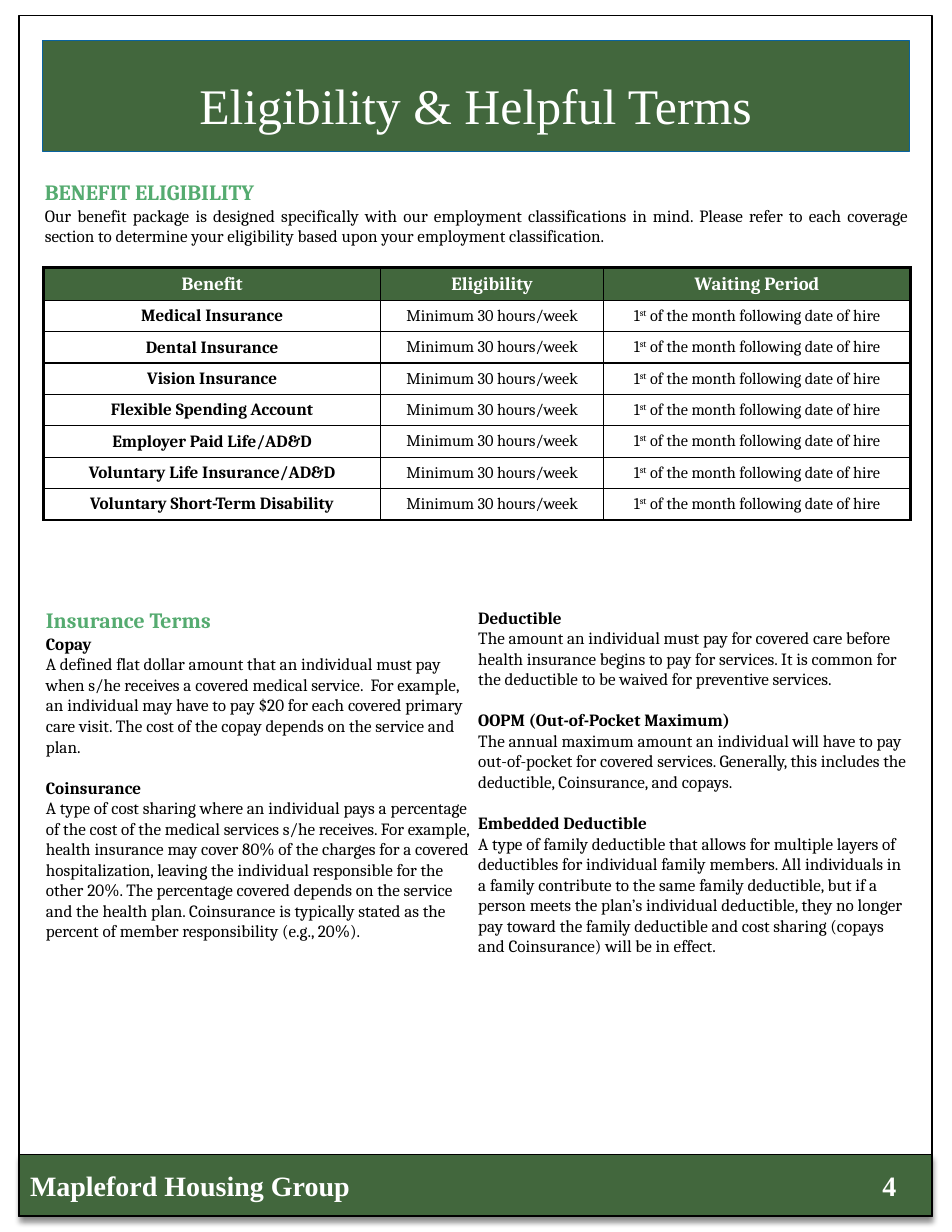
from dataclasses import dataclass
from lxml.etree import SubElement
from pptx import Presentation
from pptx.dml.color import RGBColor
from pptx.enum.shapes import MSO_SHAPE
from pptx.enum.text import MSO_ANCHOR, MSO_AUTO_SIZE, PP_ALIGN
from pptx.oxml.ns import qn
from pptx.util import Inches, Pt


@dataclass(frozen=True)
class Theme:
    serif: str = "Times New Roman"
    body: str = "Cambria"
    green: str = "42673D"
    accent: str = "55AB70"
    blue: str = "09639E"
    black: str = "000000"
    white: str = "FFFFFF"
    title_size: float = 32
    footer_size: float = 18
    heading_size: float = 14
    header_size: float = 12
    text_size: float = 11
    cell_size: float = 10.5
    gap: float = 13.2
    thin: float = 1
    thick: float = 2.25


def assign(target, values):
    for name, value in values.items():
        setattr(target, name, value)


class PageBuilder:
    def __init__(self, page, theme):
        self.page = page
        self.theme = theme
        self.styles = {
            "title": (theme.serif, theme.title_size, False, theme.white),
            "footer": (theme.serif, theme.footer_size, True, theme.white),
            "heading": (theme.body, theme.heading_size, True, theme.accent),
            "header": (theme.body, theme.header_size, True, theme.white),
            "term": (theme.body, theme.text_size, True, theme.black),
            "text": (theme.body, theme.text_size, False, theme.black),
            "cell": (theme.body, theme.cell_size, False, theme.black),
        }

    def span(self, para, text, style):
        span = para.add_run()
        span.text = text
        name, size, bold, color = self.styles[style]
        assign(span.font, {"name": name, "size": Pt(size), "bold": bold})
        span.font.color.rgb = RGBColor.from_string(color)
        return span

    def fill_text(self, frame, lines, align=PP_ALIGN.LEFT):
        for index, (style, text) in enumerate(lines):
            para = frame.paragraphs[0] if index == 0 else frame.add_paragraph()
            spaced = style == "term" and index > 0 and lines[index - 1][0] == "text"
            properties = para._p.get_or_add_pPr()
            properties.set("marL", "0")
            properties.set("indent", "0")
            SubElement(properties, qn("a:buNone"))
            assign(para, {
                "alignment": align,
                "space_before": Pt(self.theme.gap if spaced else 0),
            })
            self.span(para, text, style)

    def rectangle(self, place, line, width, fill=None):
        box = self.page.shapes.add_shape(MSO_SHAPE.RECTANGLE, *map(Inches, place))
        box.shadow.inherit = False
        box.line.color.rgb = RGBColor.from_string(line)
        box.line.width = Pt(width)
        if fill:
            box.fill.solid()
            box.fill.fore_color.rgb = RGBColor.from_string(fill)
        else:
            box.fill.background()
        return box

    def drop_shadow(self, box):
        effects = box._element.spPr.find(qn("a:effectLst"))
        shadow = SubElement(effects, qn("a:outerShdw"), blurRad=str(Pt(4)),
                            dist=str(Pt(2.5)), dir="5400000", rotWithShape="0")
        color = SubElement(shadow, qn("a:srgbClr"), val=self.theme.black)
        SubElement(color, qn("a:alpha"), val="47000")

    def text_box(self, place, lines, align=PP_ALIGN.LEFT, inset=True):
        box = self.page.shapes.add_textbox(*map(Inches, place))
        self.format_frame(box.text_frame, inset)
        self.fill_text(box.text_frame, lines, align)

    def format_frame(self, frame, inset):
        across, down = (Inches(0.1), Inches(0.05)) if inset else (0, 0)
        assign(frame, {
            "word_wrap": True, "auto_size": MSO_AUTO_SIZE.NONE,
            "margin_left": across, "margin_right": across,
            "margin_top": down, "margin_bottom": down,
        })

    def placeholder(self, index, place, lines, align=PP_ALIGN.LEFT,
                    anchor=MSO_ANCHOR.TOP, inset=False):
        box = self.page.placeholders[index]
        assign(box, dict(zip(("left", "top", "width", "height"), map(Inches, place))))
        self.format_frame(box.text_frame, inset)
        box.text_frame.vertical_anchor = anchor
        self.fill_text(box.text_frame, lines, align)
        self.page.shapes._spTree.append(box._element)

    def cell_borders(self, cell, widths):
        properties = cell._tc.get_or_add_tcPr()
        for index, (side, width) in enumerate(widths.items()):
            line = SubElement(properties, qn(f"a:ln{side}"), w=str(Pt(width)))
            fill = SubElement(line, qn("a:solidFill"))
            SubElement(fill, qn("a:srgbClr"), val=self.theme.black)
            properties.insert(index, line)

    def table(self, place, widths, heights, header, benefits):
        theme = self.theme
        rows = [header] + [(name, "Minimum 30 hours/week",
                            ("1", "st", " of the month following date of hire"))
                           for name in benefits]
        table = self.page.shapes.add_table(
            len(rows), len(header), *map(Inches, place)).table
        for column, width in zip(table.columns, widths):
            column.width = Inches(width)
        for r, values in enumerate(rows):
            table.rows[r].height = Inches(heights[min(r, 1)])
            for c, value in enumerate(values):
                cell = table.cell(r, c)
                if r == 0:
                    cell.fill.solid()
                    cell.fill.fore_color.rgb = RGBColor.from_string(theme.green)
                else:
                    cell.fill.background()
                    cell.vertical_anchor = MSO_ANCHOR.MIDDLE
                style = "header" if r == 0 else "term" if c == 0 else "cell"
                para = cell.text_frame.paragraphs[0]
                para.alignment = PP_ALIGN.CENTER
                for part in (value,) if isinstance(value, str) else value:
                    span = self.span(para, part, style)
                    if part == "st":
                        span.font._element.set("baseline", "30000")
                self.cell_borders(cell, {
                    "L": theme.thick if c == 0 else theme.thin,
                    "R": theme.thick if c == len(header) - 1 else theme.thin,
                    "T": theme.thick if r == 0 else theme.thin,
                    "B": theme.thin,
                })


def main():
    deck = Presentation()
    assign(deck, {"slide_width": Inches(8.5), "slide_height": Inches(11)})
    theme = Theme()
    page = PageBuilder(deck.slides.add_slide(deck.slide_layouts[3]), theme)

    page.rectangle((0.17, 0.14, 8.15, 10.72), theme.black, 1)
    footer = page.rectangle((0.17, 10.31, 8.15, 0.55), theme.black, 1, theme.green)
    page.drop_shadow(footer)
    page.text_box((7.78, 10.38, 0.72, 0.4), [("footer", "4")])
    page.text_box((0.17, 10.38, 6.64, 0.4), [("footer", "Mapleford Housing Group")])

    page.rectangle((0.38, 0.36, 7.74, 0.99), theme.blue, 0.75, theme.green)
    page.placeholder(0, (0.25, 0.56, 8, 0.74), [("title", "Eligibility & Helpful Terms")],
                     PP_ALIGN.CENTER, MSO_ANCHOR.MIDDLE, True)
    page.text_box((0.4, 1.6, 7.72, 0.67), [
        ("heading", "BENEFIT ELIGIBILITY"),
        ("text", "Our benefit package is designed specifically with our employment classifications in mind. Please refer to each coverage section to determine your eligibility based upon your employment classification."),
    ], PP_ALIGN.JUSTIFY, False)

    page.table((0.39, 2.39, 7.74, 2.28), (3.01, 1.99, 2.74), (0.29, 0.28),
               ("Benefit", "Eligibility", "Waiting Period"),
               ("Medical Insurance", "Dental Insurance", "Vision Insurance",
                "Flexible Spending Account", "Employer Paid Life/AD&D",
                "Voluntary Life Insurance/AD&D", "Voluntary Short-Term Disability"))

    page.placeholder(1, (0.41, 5.42, 3.86, 3.2), [
        ("heading", "Insurance Terms"),
        ("term", "Copay"),
        ("text", "A defined flat dollar amount that an individual must pay when s/he receives a covered medical service.  For example, an individual may have to pay $20 for each covered primary care visit. The cost of the copay depends on the service and plan."),
        ("term", "Coinsurance"),
        ("text", "A type of cost sharing where an individual pays a percentage of the cost of the medical services s/he receives. For example, health insurance may cover 80% of the charges for a covered hospitalization, leaving the individual responsible for the other 20%. The percentage covered depends on the service and the health plan. Coinsurance is typically stated as the percent of member responsibility (e.g., 20%)."),
    ])
    page.placeholder(2, (4.27, 5.42, 3.86, 3.2), [
        ("term", "Deductible"),
        ("text", "The amount an individual must pay for covered care before health insurance begins to pay for services. It is common for the deductible to be waived for preventive services."),
        ("term", "OOPM (Out-of-Pocket Maximum)"),
        ("text", "The annual maximum amount an individual will have to pay out-of-pocket for covered services. Generally, this includes the deductible, Coinsurance, and copays."),
        ("term", "Embedded Deductible"),
        ("text", "A type of family deductible that allows for multiple layers of deductibles for individual family members. All individuals in a family contribute to the same family deductible, but if a person meets the plan’s individual deductible, they no longer pay toward the family deductible and cost sharing (copays and Coinsurance) will be in effect."),
    ])
    deck.save("out.pptx")


if __name__ == "__main__":
    main()
